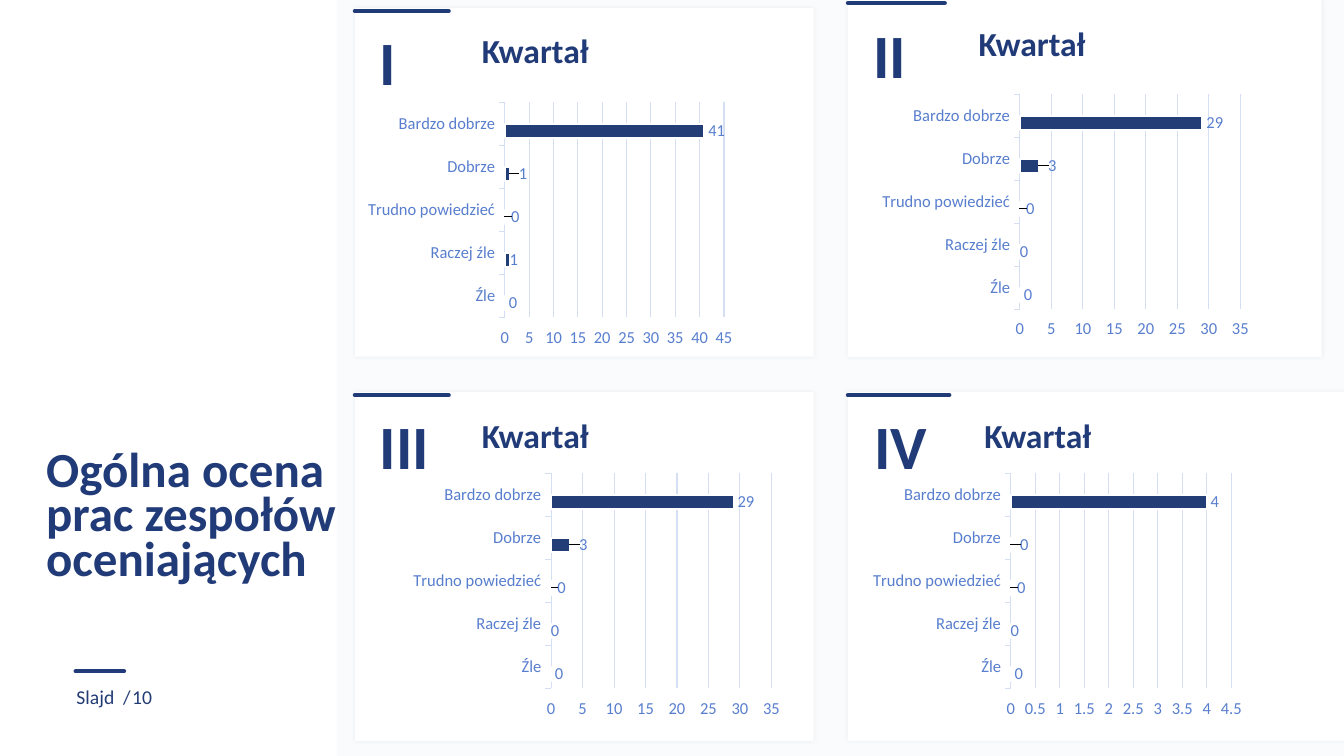
import pptx
import pptx.chart.data
import pptx.dml.color
import pptx.enum.chart
import pptx.enum.shapes
import pptx.enum.text
import pptx.oxml
import pptx.oxml.ns
import pptx.util

Inches = pptx.util.Inches
Pt = pptx.util.Pt
RGBColor = pptx.dml.color.RGBColor
qn = pptx.oxml.ns.qn
SHAPE = pptx.enum.shapes.MSO_SHAPE
ANCHOR = pptx.enum.text.MSO_ANCHOR
CHART = pptx.enum.chart

WHITE = RGBColor(0xFF, 0xFF, 0xFF)
NAVY = RGBColor(0x21, 0x3B, 0x78)
INK = RGBColor(0x22, 0x3C, 0x73)
BAR = RGBColor(0x23, 0x3D, 0x76)
SPARE = RGBColor(0x29, 0x4B, 0x93)
LABEL = RGBColor(0x58, 0x7E, 0xCE)
GRID = RGBColor(0xD5, 0xDF, 0xF3)
FONT = "Calibri"

RATINGS = ["Źle", "Raczej źle", "Trudno powiedzieć", "Dobrze", "Bardzo dobrze"]
# Sideways shift of single value labels, as a share of the chart width
SHIFTS = {1: -0.01, 2: 0.006, 3: 0.013}
# Numeral, card box, chart corner, left edge of plot, values
QUARTERS = [
    ("I", (3.52, 0.08, 4.55, 3.46), (3.65, 0.79), 0.315, (0, 1, 0, 1, 41)),
    ("II", (8.41, 0, 4.7, 3.54), (8.75, 0.71), 0.321, (0, 0, 0, 3, 29)),
    ("III", (3.52, 3.89, 4.55, 3.46), (4.1, 4.47), 0.321, (0, 0, 0, 3, 29)),
    ("IV", (8.41, 3.89, 4.92, 3.46), (8.66, 4.47), 0.321, (0, 0, 0, 0, 4)),
]


def make(xml):
    """Parse an XML snippet that may use the a: and c: prefixes."""
    head, tail = xml.split(">", 1)
    spaces = pptx.oxml.ns.nsdecls("a", "c")
    if head.endswith("/"):
        return pptx.oxml.parse_xml(f"{head[:-1]} {spaces}/>{tail}")
    return pptx.oxml.parse_xml(f"{head} {spaces}>{tail}")


def style(font, size, color, bold=False):
    font.name, font.size, font.bold = FONT, Pt(size), bold
    font.color.rgb = color


def add_text(shapes, box, words, size, color, bold=False, space=None, wrap=True):
    """Add a text box and return its frame."""
    frame = shapes.add_textbox(*map(Inches, box)).text_frame
    frame.word_wrap = wrap
    line = frame.paragraphs[0]
    line.text = words
    line.line_spacing = space
    style(line.font, size, color, bold)
    return frame


def add_rect(shapes, box, color):
    rect = shapes.add_shape(SHAPE.RECTANGLE, *map(Inches, box))
    rect.shadow.inherit = False
    rect.fill.solid()
    rect.fill.fore_color.rgb = color
    rect.line.fill.background()
    return rect


def add_rule(shapes, x, y, width):
    """Add a short thick line with round ends."""
    rule = shapes.add_connector(
        pptx.enum.shapes.MSO_CONNECTOR.STRAIGHT,
        Inches(x), Inches(y), Inches(x + width), Inches(y))
    rule.line.color.rgb = NAVY
    rule.line.width = Pt(3)
    rule.line._get_or_add_ln().set("cap", "rnd")
    rule._element.spPr.append(make("<a:effectLst/>"))


def add_side(slide, box):
    """Place the title and the slide number in the left column."""
    x, y, _, height = box
    foot = y + height
    add_text(slide.shapes, (x + 0.36, foot - 3.06, 3.27, 1.68),
             "Ogólna ocena prac zespołów oceniających", 35, NAVY, True, 0.75)
    add_rule(slide.shapes, x + 0.75, foot - 0.84, 0.48)
    add_text(slide.shapes, (x + 0.66, foot - 0.75, 0.75, 0.34),
             "Slajd  /", 14, INK, wrap=False)
    page = add_text(slide.shapes, (x + 1.18, foot - 0.77, 0.71, 0.36), "10", 14, INK)
    page.vertical_anchor = ANCHOR.MIDDLE
    page.margin_left = page.margin_right = Inches(0.13)
    page.margin_top = page.margin_bottom = Inches(0.07)


def add_card(slide, box, numeral):
    x, y, width, height = box
    across, down = width / 4.55, height / 3.46
    shapes = slide.shapes.add_group_shape().shapes
    card = add_rect(shapes, box, WHITE)
    card._element.spPr.find(qn("a:effectLst")).append(make(
        f'<a:outerShdw blurRad="{Pt(3)}" dist="0" algn="ctr" rotWithShape="0">'
        '<a:srgbClr val="000000"><a:alpha val="5000"/></a:srgbClr></a:outerShdw>'))
    add_rule(shapes, x, y + 0.03, 0.93 * across)
    add_text(shapes, (x + 0.15 * across, y + 0.28 * down, 1.01 * across, 1.2 * down),
             numeral, 44, NAVY, True, 0.75)
    add_text(shapes, (x + 1.16 * across, y + 0.25 * down, 3.39 * across, 1.2 * down),
             "Kwartał", 24, NAVY, True, 0.8)


def set_axes(chart):
    for axis in (chart.category_axis, chart.value_axis):
        axis.major_tick_mark = CHART.XL_TICK_MARK.OUTSIDE
        axis.minor_tick_mark = CHART.XL_TICK_MARK.NONE
        style(axis.tick_labels.font, 12, LABEL)
    grid = chart.value_axis.major_gridlines.format.line
    for line in (chart.category_axis.format.line, grid):
        line.color.rgb = GRID
        line.width = Pt(0.75)
    chart.value_axis.format.line.fill.background()


def set_labels(series):
    """Show the values, some of them shifted sideways."""
    labels = series.data_labels
    labels.show_value = True
    labels.position = CHART.XL_LABEL_POSITION.OUTSIDE_END
    style(labels.font, 12, LABEL)
    for index, shift in SHIFTS.items():
        label = series.points[index].data_label
        style(label.font, 12, LABEL)
        label.position = CHART.XL_LABEL_POSITION.OUTSIDE_END
        mark = labels._element.xpath(f"c:dLbl/c:idx[@val='{index}']")[0]
        mark.addnext(make(
            f'<c:layout><c:manualLayout><c:x val="{shift}"/><c:y val="0"/>'
            "</c:manualLayout></c:layout>"))


def set_plot(chart, left):
    """Fix the plot area and clear the backgrounds."""
    space = chart._chartSpace
    area = space.chart.plotArea
    for old in area.findall(qn("c:layout")):
        area.remove(old)
    sizes = zip("xywh", (left, 0.083, 0.539, 0.791))
    area.insert(0, make(
        '<c:layout><c:manualLayout><c:layoutTarget val="inner"/>'
        '<c:xMode val="edge"/><c:yMode val="edge"/>'
        + "".join(f'<c:{key} val="{size}"/>' for key, size in sizes)
        + "</c:manualLayout></c:layout>"))
    clear = "<c:spPr><a:noFill/><a:ln><a:noFill/></a:ln></c:spPr>"
    area.append(make(clear))
    space.chart.addnext(make(clear))


def add_bars(slide, box, left, values):
    data = pptx.chart.data.CategoryChartData()
    data.categories = RATINGS
    data.add_series("Series 1", values)
    data.add_series("Series 2", [None] * len(RATINGS))
    chart = slide.shapes.add_chart(
        CHART.XL_CHART_TYPE.BAR_CLUSTERED, *map(Inches, box), data).chart
    chart.has_title = chart.has_legend = False
    style(chart.font, 10, LABEL)
    plot = chart.plots[0]
    plot.gap_width = 100
    plot.vary_by_categories = False
    for series, color in zip(plot.series, (BAR, SPARE)):
        series.format.fill.solid()
        series.format.fill.fore_color.rgb = color
        series.format.line.color.rgb = WHITE
        series.format.line.width = Pt(1.5)
    set_axes(chart)
    set_labels(plot.series[0])
    set_plot(chart, left)


def main():
    deck = pptx.Presentation()
    deck.slide_width, deck.slide_height = Inches(13.33), Inches(7.5)
    slide = deck.slides.add_slide(deck.slide_layouts[6])
    panel = add_rect(slide.shapes, (3.34, 0, 9.99, 7.5), INK)
    tint = panel._element.spPr.find(qn("a:solidFill"))[0]
    tint.append(make('<a:alpha val="2000"/>'))
    add_side(slide, (0, 0, 3.34, 7.5))
    for numeral, card, _, _, _ in QUARTERS:
        add_card(slide, card, numeral)
    for _, _, corner, left, values in QUARTERS:
        add_bars(slide, (*corner, 4.12, 2.7), left, values)
    deck.save("out.pptx")


if __name__ == "__main__":
    main()
